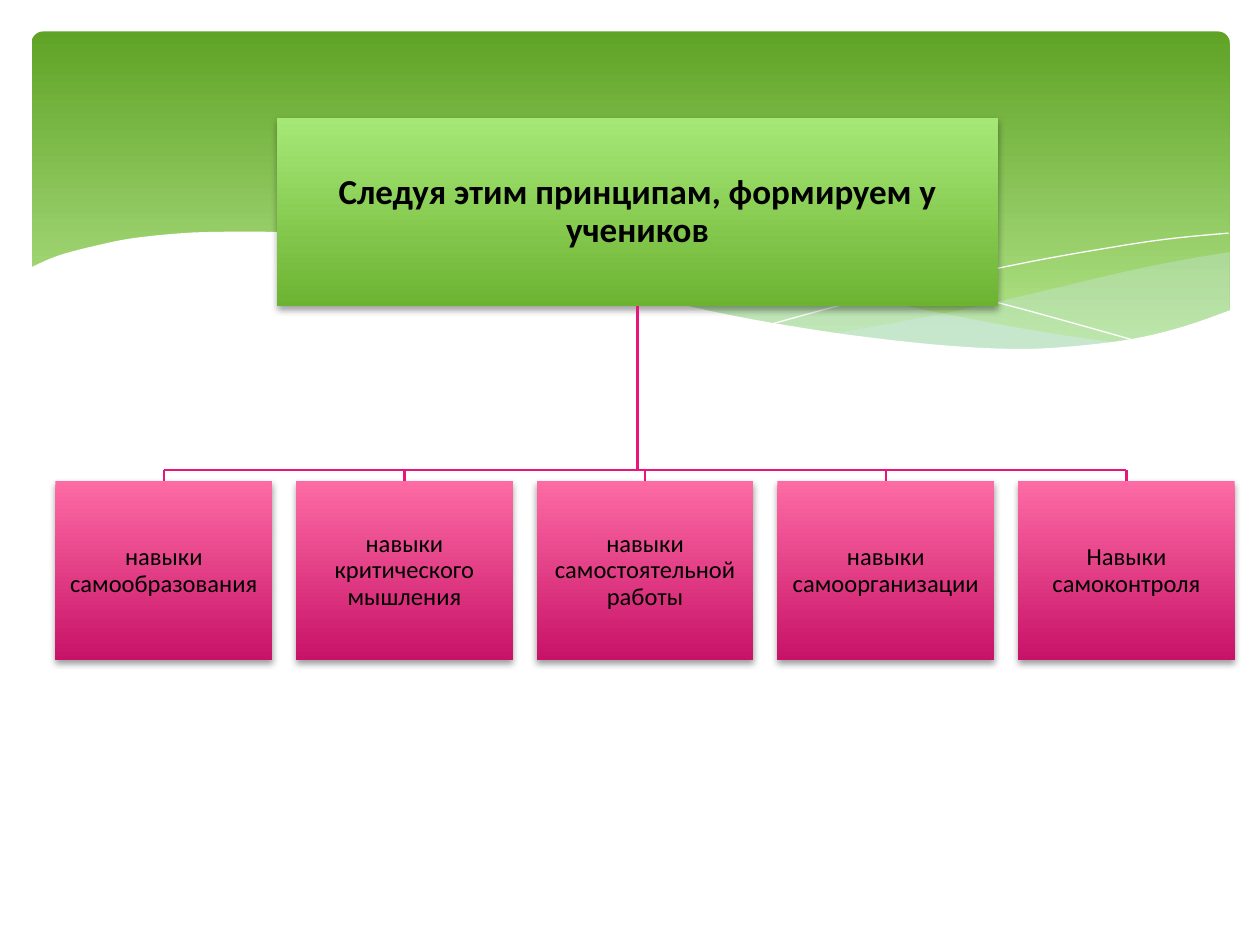
"""Build a slide with one principle box branching into five learner skills."""
import lxml.etree
import pptx
import pptx.dml.color
import pptx.enum.dml
import pptx.enum.shapes
import pptx.enum.text
import pptx.oxml.ns
import pptx.util

Inches = pptx.util.Inches
Pt = pptx.util.Pt
qn = pptx.oxml.ns.qn
SHAPES = pptx.enum.shapes.MSO_SHAPE
STRAIGHT = pptx.enum.shapes.MSO_CONNECTOR.STRAIGHT

COLORS = {
    "white": "FFFFFF", "black": "000000", "ice": "D6ECFF", "branch": "EA157A",
    "header": ("5FA326", "B2E389"),
    "title": ("A6E877", "6DB332"),
    "skill": ("FD6BA4", "C81268"),
}
TITLE = "Следуя этим принципам, формируем у учеников"
SKILLS = [
    "навыки самообразования",
    "навыки критического мышления",
    "навыки самостоятельной работы",
    "навыки самоорганизации",
    "Навыки самоконтроля",
]
HEADER_BOX = (0.25, 0.25, 9.51, 2.7)
TITLE_BOX = (2.2, 0.94, 5.72, 1.49)
SKILL_LEFT, SKILL_TOP, SKILL_WIDTH, SKILL_HEIGHT, SKILL_STEP = 0.44, 3.82, 1.72, 1.42, 1.91
BUS_TOP = 3.73

WAVES = [
    {"fill": "ice", "opacity": 29, "curves": [
        [(9.76, 2), (9.35, 2.07), (8.91, 2.16), (8.32, 2.3), (7.53, 2.48), (6.61, 2.65)],
        [(6.61, 2.65), (7.05, 2.71), (7.57, 2.76), (8.03, 2.78), (8.54, 2.76),
         (8.97, 2.7), (9.35, 2.62), (9.76, 2.47)]]},
    {"fill": "ice", "opacity": 40, "curves": [
        [(8.93, 2.73), (8.37, 2.65), (7.75, 2.54), (7.06, 2.4), (6.29, 2.22),
         (5.69, 2.08), (5.14, 1.98), (4.65, 1.91), (4.2, 1.87), (3.8, 1.85),
         (3.28, 1.87), (2.86, 1.91)],
        [(2.86, 1.91), (3.42, 1.99), (4.04, 2.11), (4.49, 2.22), (5.3, 2.4),
         (6.01, 2.55), (6.65, 2.66), (7.22, 2.74), (7.73, 2.77), (8.18, 2.78),
         (8.57, 2.77), (8.93, 2.73)]]},
    {"line": "white", "curves": [
        [(3.09, 1.95), (3.53, 1.89), (4.01, 1.87), (4.5, 1.88), (5.1, 1.92),
         (5.82, 2), (6.65, 2.13), (7.27, 2.26), (7.95, 2.41), (9.07, 2.72)]]},
    {"line": "white", "curves": [
        [(6.13, 2.57), (6.72, 2.41), (7.48, 2.23), (8.06, 2.1), (8.66, 1.99),
         (9.24, 1.9), (9.75, 1.85)]]},
    {"fill": "white", "opacity": 100, "curves": [
        [(9.77, 2.46), (9.4, 2.59), (8.99, 2.69), (8.5, 2.75), (8.09, 2.77),
         (7.61, 2.75), (7.08, 2.7), (6.48, 2.62), (5.79, 2.5), (5.03, 2.33),
         (4.47, 2.2), (3.91, 2.07), (3.4, 1.97), (2.92, 1.9), (2.5, 1.86),
         (2.11, 1.84), (1.77, 1.84), (1.46, 1.85), (1.06, 1.89), (0.76, 1.95),
         (0.46, 2.03), (0.23, 2.13)],
        [(0.23, 3.29), (9.77, 3.29)]]},
]


def rgb(name):
    return pptx.dml.color.RGBColor.from_string(COLORS[name])


def place(box, left, top, width, height):
    box.left, box.top = Inches(left), Inches(top)
    box.width, box.height = Inches(width), Inches(height)


def smooth(points, steps=5):
    padded = [points[0], *points, points[-1]]
    result = [points[0]]
    for a, b, c, d in zip(padded, padded[1:], padded[2:], padded[3:]):
        for step in range(1, steps + 1):
            t = step / steps
            result.append(tuple(
                0.5 * (2 * q + (r - p) * t + (2 * p - 5 * q + 4 * r - s) * t ** 2
                       + (3 * q - p - 3 * r + s) * t ** 3)
                for p, q, r, s in zip(a, b, c, d)))
    return result


def fill_gradient(box, name, last=1.0):
    box.fill.gradient()
    box.fill.gradient_angle = 270
    for stop, color, position in zip(box.fill.gradient_stops, COLORS[name], (0, last)):
        stop.color.rgb = pptx.dml.color.RGBColor.from_string(color)
        stop.position = position
    box.line.fill.background()
    box.shadow.inherit = False


def add_shadow(box):
    effects = box.element.spPr.find(qn("a:effectLst"))
    shadow = lxml.etree.SubElement(
        effects, qn("a:outerShdw"), blurRad=str(Pt(4)), dist=str(Pt(2)),
        dir="5400000", algn="ctr", rotWithShape="0")
    color = lxml.etree.SubElement(shadow, qn("a:srgbClr"), val=COLORS["black"])
    lxml.etree.SubElement(color, qn("a:alpha"), val="38000")


def write(box, text, size, bold=False, color="black", font="Calibri"):
    frame = box.text_frame
    frame.word_wrap = True
    frame.auto_size = pptx.enum.text.MSO_AUTO_SIZE.NONE
    frame.vertical_anchor = pptx.enum.text.MSO_ANCHOR.MIDDLE
    frame.margin_left = frame.margin_right = Inches(0.01)
    frame.margin_top = frame.margin_bottom = Inches(0.01)
    para = frame.paragraphs[0]
    para.alignment = pptx.enum.text.PP_ALIGN.CENTER
    para.line_spacing = 0.9
    span = para.add_run()
    span.text = text
    span.font.name, span.font.size, span.font.bold = font, Pt(size), bold
    span.font.color.rgb = rgb(color)


def add_wave(page, wave):
    points = [(Inches(x), Inches(y)) for curve in wave["curves"] for x, y in smooth(curve)]
    builder = page.shapes.build_freeform(*points[0])
    builder.add_line_segments(points[1:], close="fill" in wave)
    shape = builder.convert_to_shape()
    shape.shadow.inherit = False
    if "line" in wave:
        shape.fill.background()
        shape.line.color.rgb = rgb(wave["line"])
        shape.line.width = Pt(0)
        return
    shape.line.fill.background()
    shape.fill.solid()
    shape.fill.fore_color.rgb = rgb(wave["fill"])
    if wave["opacity"] < 100:
        color = shape.element.spPr.find(qn("a:solidFill"))[0]
        lxml.etree.SubElement(color, qn("a:alpha"), val=str(wave["opacity"] * 1000))


def add_branch(page, start, end):
    branch = page.shapes.add_connector(STRAIGHT, *map(Inches, start + end))
    branch.line.color.rgb = rgb("branch")
    branch.line.width = Pt(1.25)
    lxml.etree.SubElement(branch.element.spPr, qn("a:effectLst"))
    return branch


def main():
    deck = pptx.Presentation()
    deck.slide_width, deck.slide_height = Inches(10), Inches(7.5)
    page = deck.slides.add_slide(deck.slide_layouts[5])

    header = page.shapes.add_shape(SHAPES.ROUNDED_RECTANGLE, *map(Inches, HEADER_BOX))
    header.adjustments[0] = 0.034
    fill_gradient(header, "header", last=0.9)
    for wave in WAVES:
        add_wave(page, wave)

    title = page.shapes.title
    title.element.getparent().append(title.element)
    place(title, *TITLE_BOX)
    fill_gradient(title, "title")
    add_shadow(title)
    write(title, TITLE, size=20, bold=True)

    trunk_x = TITLE_BOX[0] + TITLE_BOX[2] / 2
    trunk = add_branch(page, (trunk_x, TITLE_BOX[1] + TITLE_BOX[3]), (trunk_x, BUS_TOP))
    trunk.begin_connect(title, 2)
    centers = [SKILL_LEFT + SKILL_WIDTH / 2 + SKILL_STEP * i for i in range(len(SKILLS))]
    add_branch(page, (centers[0], BUS_TOP), (centers[-1], BUS_TOP))

    for skill, center in zip(SKILLS, centers):
        box = page.shapes.add_shape(
            SHAPES.RECTANGLE, Inches(center - SKILL_WIDTH / 2), Inches(SKILL_TOP),
            Inches(SKILL_WIDTH), Inches(SKILL_HEIGHT))
        fill_gradient(box, "skill")
        add_shadow(box)
        write(box, skill, size=14)
        stub = add_branch(page, (center, BUS_TOP), (center, SKILL_TOP))
        stub.end_connect(box, 0)

    deck.save("out.pptx")


if __name__ == "__main__":
    main()
